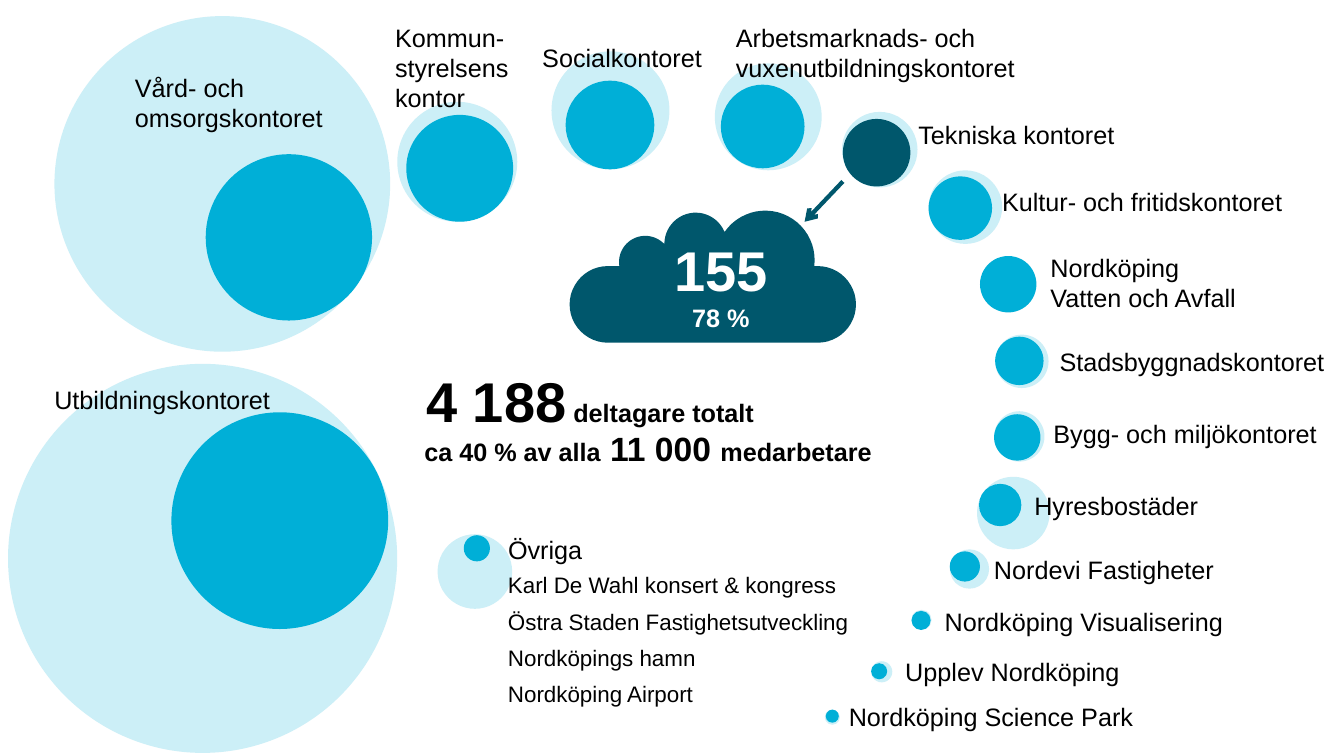
from math import cos, radians, sin

from lxml.etree import SubElement
from pptx import Presentation
from pptx.dml.color import RGBColor
from pptx.enum.shapes import MSO_CONNECTOR, MSO_SHAPE
from pptx.enum.text import PP_ALIGN
from pptx.oxml.ns import qn
from pptx.util import Inches, Pt

BLUE = "00AFD7"
PETROL = "00576C"
BLACK = "000000"
WHITE = "FFFFFF"

# Each office: label, label box, participants circle, staff circle (left, top, diameter)
OFFICES = [
    ("Vård- och\nomsorgskontoret", (1.24, 0.67, 2.2, 0.71), (2.04, 1.53, 1.65), (0.54, 0.16, 3.33)),
    ("Utbildningskontoret", (0.44, 3.76, 2.36, 0.4), (1.7, 4.09, 2.15), (0.08, 3.61, 3.86)),
    ("Kommun-\nstyrelsens\nkontor", (3.82, 0.17, 1.41, 1.01), (4.03, 1.14, 1.06), (3.94, 1.01, 1.19)),
    ("Socialkontoret", (5.28, 0.37, 1.9, 0.4), (5.61, 0.8, 0.88), (5.47, 0.51, 1.17)),
    ("Arbetsmarknads- och\nvuxenutbildningskontoret", (7.2, 0.17, 3.1, 0.71), (7.15, 0.84, 0.83), (7.09, 0.63, 1.06)),
    ("Tekniska kontoret", (9.01, 1.13, 2.3, 0.4), (8.36, 1.18, 0.67), (8.35, 1.11, 0.75)),
    ("Kultur- och fritidskontoret", (9.84, 1.8, 3.1, 0.4), (9.21, 1.75, 0.63), (9.21, 1.69, 0.73)),
    ("Nordköping\nVatten och Avfall", (10.32, 2.45, 2.2, 0.71), (9.72, 2.54, 0.56), None),
    ("Stadsbyggnadskontoret", (10.41, 3.39, 2.95, 0.4), (9.87, 3.34, 0.48), (9.87, 3.32, 0.53)),
    ("Bygg- och miljökontoret", (10.35, 4.1, 2.96, 0.4), (9.86, 4.11, 0.46), (9.86, 4.08, 0.5)),
    ("Hyresbostäder", (10.16, 4.82, 1.99, 0.4), (9.71, 4.8, 0.42), (9.69, 4.73, 0.72)),
    ("Nordevi Fastigheter", (9.76, 5.45, 2.63, 0.4), (9.42, 5.47, 0.3), (9.42, 5.45, 0.39)),
    ("Nordköping Visualisering", (9.27, 5.97, 3.02, 0.4), (9.04, 6.06, 0.19), (9.04, 6.05, 0.2)),
    ("Upplev Nordköping", (8.88, 6.46, 3.53, 0.4), (8.64, 6.58, 0.16), (8.64, 6.56, 0.21)),
    ("Nordköping Science Park", (8.32, 6.91, 3.53, 0.4), (8.19, 7.04, 0.13), (8.18, 7.04, 0.15)),
    ("Övriga", (4.94, 5.25, 2.32, 0.4), (4.6, 5.31, 0.26), (4.34, 5.3, 0.74)),
]
OTHERS = [
    "Karl De Wahl konsert & kongress",
    "Östra Staden Fastighetsutveckling",
    "Nordköpings hamn",
    "Nordköping Airport",
]
# Cloud outline, clockwise: centre x, centre y, radius, start and end angle
CLOUD_ARCS = [
    (0.38, 0.93, 0.38, 90, 270),
    (0.75, 0.51, 0.26, 171, 313),
    (1.25, 0.33, 0.31, 180, 337),
    (1.94, 0.49, 0.49, 215, 367),
    (2.46, 0.93, 0.38, 270, 450),
]


def color(value):
    """Return the colour of a hex string."""
    return RGBColor.from_string(value)


def paint(shape, fill, alpha=None):
    """Give a shape a plain fill without line or shadow."""
    shape.shadow.inherit = False
    shape.line.fill.background()
    shape.fill.solid()
    shape.fill.fore_color.rgb = color(fill)
    if alpha is not None:
        tint = shape.fill._xPr.find(f".//{qn('a:srgbClr')}")
        SubElement(tint, qn("a:alpha"), val=str(alpha * 1000))


def add_text(slide, box, *runs, size=18, bold=False, fill=BLACK, align=PP_ALIGN.LEFT):
    """Add a text box whose runs are strings or pairs of string and size."""
    shape = slide.shapes.add_textbox(*map(Inches, box))
    shape.text_frame.word_wrap = True
    paragraph = shape.text_frame.paragraphs[0]
    paragraph.alignment = align
    for item in runs:
        text, run_size = (item, size) if isinstance(item, str) else item
        for index, line in enumerate(text.split("\n")):
            if index:
                paragraph.add_line_break()
            run = paragraph.add_run()
            run.text = line
            run.font.name = "Arial"
            run.font.size = Pt(run_size)
            run.font.bold = bold
            run.font.color.rgb = color(fill)


def add_circle(slide, left, top, diameter, fill, alpha=None):
    """Add a circle from its corner and diameter."""
    size = Inches(diameter)
    shape = slide.shapes.add_shape(MSO_SHAPE.OVAL, Inches(left), Inches(top), size, size)
    paint(shape, fill, alpha)


def add_office(slide, label, box, participants, staff):
    """Add the two circles and the label of one office."""
    if staff:
        add_circle(slide, *staff, BLUE, alpha=20)
    add_circle(slide, *participants, PETROL if label == "Tekniska kontoret" else BLUE)
    add_text(slide, box, label)


def add_others(slide, left, top, width):
    """List the remaining companies in evenly spaced rows."""
    for row, name in enumerate(OTHERS):
        add_text(slide, (left, top + 0.36 * row, width, 0.37), name, size=16)


def add_totals(slide, left, top):
    """Add the two lines with the total numbers."""
    add_text(slide, (left + 0.02, top, 4.34, 0.77), ("4 188", 40), " deltagare totalt", bold=True)
    add_text(slide, (left, top + 0.61, 4.73, 0.5),
             "ca 40 % av alla", (" 11 000 ", 24), "medarbetare", bold=True)


def add_cloud(slide, left, top):
    """Draw the cloud from its arcs and put the result on it."""
    points = [
        (Inches(left + x + radius * cos(radians(start + (end - start) * step / 24))),
         Inches(top + y + radius * sin(radians(start + (end - start) * step / 24))))
        for x, y, radius, start, end in CLOUD_ARCS
        for step in range(25)
    ]
    builder = slide.shapes.build_freeform(*points[0])
    builder.add_line_segments(points[1:], close=True)
    paint(builder.convert_to_shape(), PETROL)
    for text, offset, height, size in (("155", 0.2, 0.77, 40), ("78 %", 0.86, 0.4, 18)):
        add_text(slide, (left + 0.68, top + offset, 1.64, height), text,
                 size=size, bold=True, fill=WHITE, align=PP_ALIGN.CENTER)


def add_arrow(slide, start, end):
    """Add the arrow from an office to its cloud."""
    arrow = slide.shapes.add_connector(MSO_CONNECTOR.STRAIGHT, *map(Inches, start + end))
    arrow.line.color.rgb = color(PETROL)
    arrow.line.width = Pt(3)
    SubElement(arrow.line._get_or_add_ln(), qn("a:tailEnd"), type="arrow")
    SubElement(arrow._element.spPr, qn("a:effectLst"))


def main():
    """Build and save the slide."""
    presentation = Presentation()
    presentation.slide_width = Inches(13.33)
    presentation.slide_height = Inches(7.5)
    slide = presentation.slides.add_slide(presentation.slide_layouts[6])
    for office in OFFICES:
        add_office(slide, *office)
    add_others(slide, 4.94, 5.62, 3.97)
    add_totals(slide, 4.11, 3.59)
    add_cloud(slide, 5.65, 2.09)
    add_arrow(slide, (8.36, 1.8), (7.98, 2.2))
    presentation.save("out.pptx")


if __name__ == "__main__":
    main()
